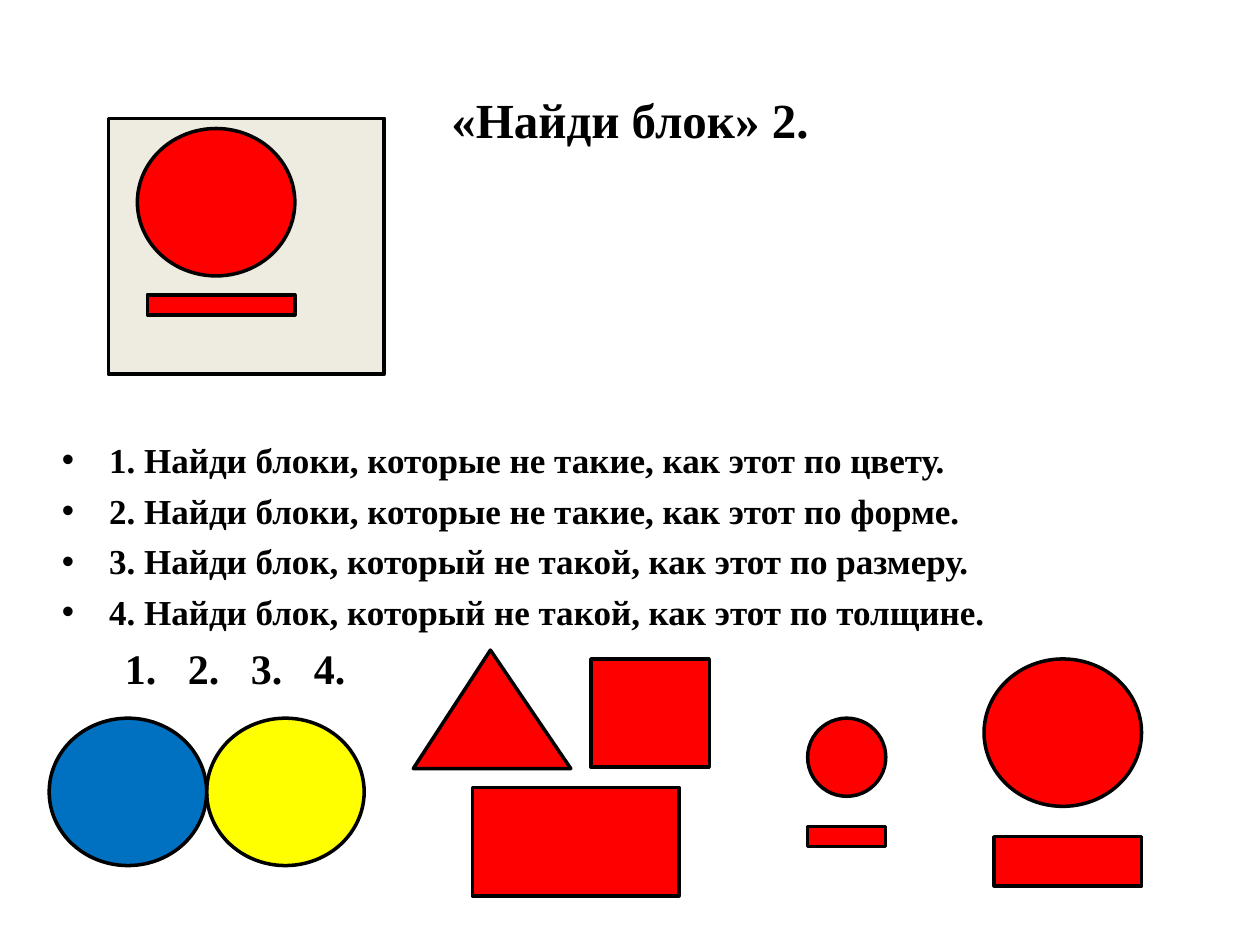
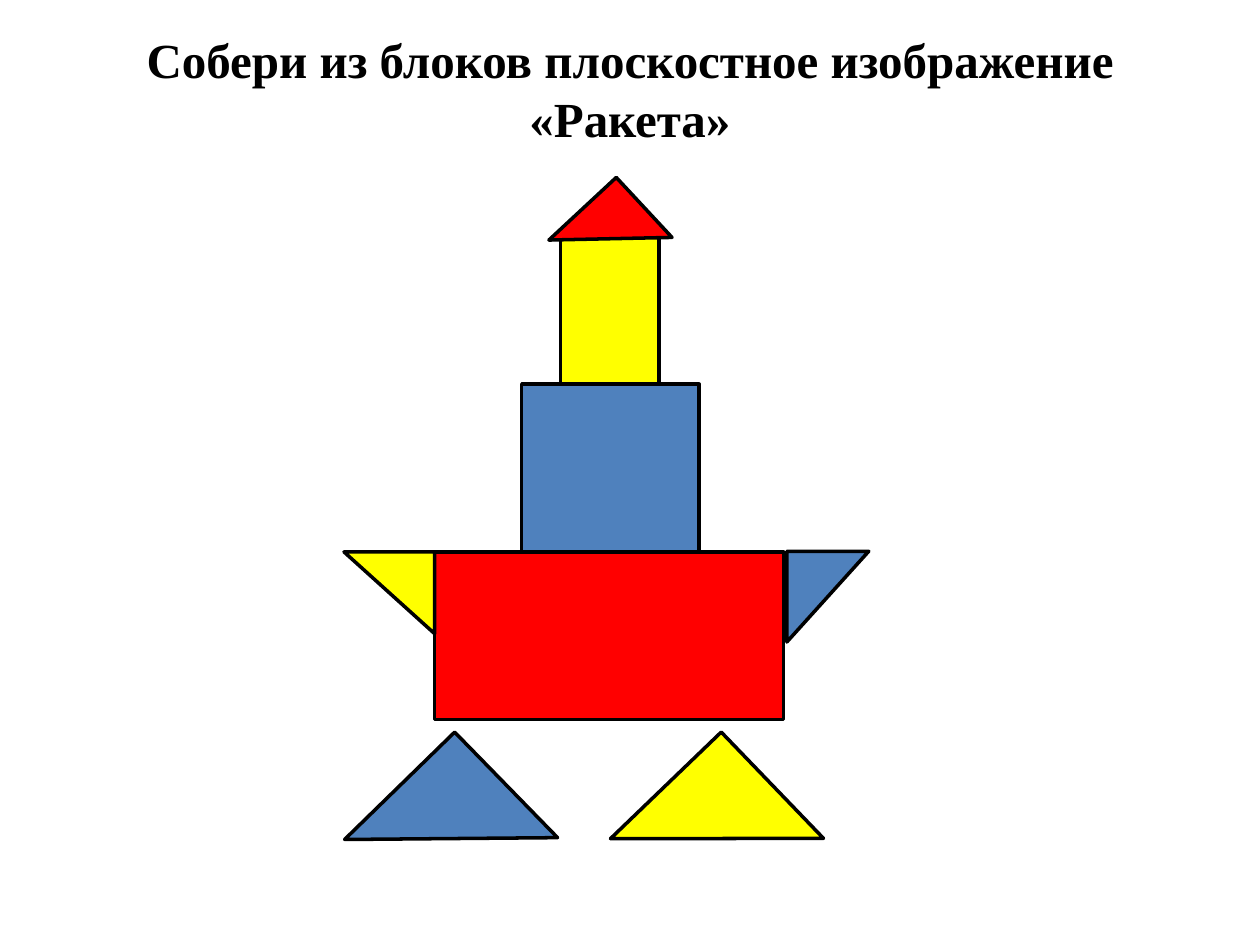
from lxml import etree
from pptx import Presentation
from pptx import util as u
from pptx.dml import color
from pptx.enum import shapes, text
from pptx.oxml import ns

FONT = "Times New Roman"
BLACK, CARD = "000000", "EEECE1"
RED, YELLOW, BLUE, STEEL = "FF0000", "FFFF00", "0070C0", "4F81BD"
KIND = shapes.MSO_SHAPE
CIRCLE_SIZE = (1.25, 1.17)

QUESTIONS = [
    "1. Найди блоки, которые не такие, как этот по цвету.",
    "2. Найди блоки, которые не такие, как этот по форме.",
    "3. Найди блок, который не такой, как этот по размеру.",
    "4. Найди блок, который не такой, как этот по толщине.",
]
ANSWER_TABS = [0.41, 2.99, 5.99, 7.33]


def rgb(hex_code):
    """Turn a hex string into a colour."""
    return color.RGBColor.from_string(hex_code)


def write(paragraph, words, size=20, bold=True, ink=BLACK, align=None, before=0):
    """Put formatted words into a paragraph."""
    run = paragraph.add_run()
    run.text = words
    run.font.name, run.font.size, run.font.bold = FONT, u.Pt(size), bold
    run.font.color.rgb = rgb(ink)
    paragraph.alignment = align
    paragraph.space_before = u.Pt(before)


def place(part, left, top, width, height):
    """Move and size a part in inches."""
    part.left, part.top = u.Inches(left), u.Inches(top)
    part.width, part.height = u.Inches(width), u.Inches(height)


def add_title(slide, words, top):
    """Fill the title placeholder in the shared style."""
    title = slide.shapes.title
    place(title, 0.5, top, 9, 0.94)
    frame = title.text_frame
    frame.auto_size = text.MSO_AUTO_SIZE.NONE
    frame.vertical_anchor = text.MSO_ANCHOR.MIDDLE
    write(frame.paragraphs[0], words, size=28, align=text.PP_ALIGN.CENTER)


def add_blocks(slide, origin, blocks):
    """Draw outlined blocks (kind, colour, left, top, width, height, turn) from an origin."""
    for kind, fill, left, top, width, height, *turn in blocks:
        block = slide.shapes.add_shape(
            kind, u.Inches(origin[0] + left), u.Inches(origin[1] + top),
            u.Inches(width), u.Inches(height))
        block.shadow.inherit = False
        block.fill.solid()
        block.fill.fore_color.rgb = rgb(fill)
        block.line.color.rgb = rgb(BLACK)
        block.line.width = u.Pt(2)
        block.rotation = turn[0] if turn else 0


def set_tabs(paragraph, stops):
    """Give a paragraph no bullet, no indent and the listed tab stops."""
    props = paragraph._p.get_or_add_pPr()
    props.set("marL", "0")
    props.set("indent", "0")
    etree.SubElement(props, ns.qn("a:buNone"))
    tabs = etree.SubElement(props, ns.qn("a:tabLst"))
    for stop in stops:
        etree.SubElement(tabs, ns.qn("a:tab"), pos=str(u.Inches(stop)), algn="l")


def add_questions(slide, box):
    """List the questions and the row of answer numbers below them."""
    body = slide.placeholders[1]
    place(body, *box)
    frame = body.text_frame
    frame.auto_size = text.MSO_AUTO_SIZE.NONE
    for index, question in enumerate(QUESTIONS):
        paragraph = frame.add_paragraph() if index else frame.paragraphs[0]
        write(paragraph, question, before=5 if index else 0)
    answers = frame.add_paragraph()
    set_tabs(answers, ANSWER_TABS)
    numbers = "".join(f"\t{number}." for number in range(1, len(ANSWER_TABS) + 1))
    write(answers, numbers, size=24, before=5.5)


def add_sample(slide, origin):
    """Draw the card with the block to compare against."""
    add_blocks(slide, origin, [
        (KIND.RECTANGLE, CARD, 0, 0, 2.19, 2.03),
        (KIND.OVAL, RED, 0.23, 0.08, *CIRCLE_SIZE),
        (KIND.RECTANGLE, RED, 0.31, 1.4, 1.17, 0.16),
    ])


def add_answers(slide):
    """Draw the blocks differing by colour, shape, size and thickness."""
    add_blocks(slide, (0.39, 5.7), [
        (KIND.OVAL, YELLOW, 1.25, 0, *CIRCLE_SIZE),
        (KIND.OVAL, BLUE, 0, 0, *CIRCLE_SIZE),
    ])
    add_blocks(slide, (3.28, 5.16), [
        (KIND.RECTANGLE, RED, 1.41, 0.07, 0.94, 0.86),
        (KIND.RECTANGLE, RED, 0.47, 1.09, 1.64, 0.86),
        (KIND.ISOSCELES_TRIANGLE, RED, 0, 0, 1.25, 0.94),
    ])
    slide.shapes[-1].adjustments[0] = 0.49
    add_blocks(slide, (6.41, 5.7), [
        (KIND.OVAL, RED, 0, 0, 0.62, 0.62),
        (KIND.RECTANGLE, RED, 0, 0.86, 0.62, 0.16),
    ])
    add_blocks(slide, (7.81, 5.23), [
        (KIND.OVAL, RED, 0, 0, *CIRCLE_SIZE),
        (KIND.RECTANGLE, RED, 0.08, 1.41, 1.17, 0.39),
    ])


def add_rocket(slide, origin):
    """Assemble the rocket from rectangles and turned right triangles."""
    add_blocks(slide, origin, [
        (KIND.RECTANGLE, RED, 0.72, 2.81, 2.77, 1.33),
        (KIND.RECTANGLE, STEEL, 1.41, 1.48, 1.41, 1.33),
        (KIND.RECTANGLE, YELLOW, 1.72, 0.31, 0.78, 1.17),
        (KIND.RIGHT_TRIANGLE, YELLOW, 2.35, 4.5, 1.22, 1.17, 136.1),
        (KIND.RIGHT_TRIANGLE, YELLOW, 0, 2.81, 0.72, 0.65, 180),
        (KIND.RIGHT_TRIANGLE, STEEL, 3.48, 2.84, 0.72, 0.65, 90),
        (KIND.RIGHT_TRIANGLE, RED, 1.75, 0, 0.73, 0.65, 137.1),
        (KIND.RIGHT_TRIANGLE, STEEL, 0.24, 4.5, 1.22, 1.17, 135.7),
    ])


def build_find_block(deck):
    """Build the slide with the block-finding task."""
    slide = deck.slides.add_slide(deck.slide_layouts[1])
    add_title(slide, "«Найди блок» 2.", 0.47)
    add_questions(slide, (0.39, 3.43, 9.18, 3.45))
    add_sample(slide, (0.86, 0.94))
    add_answers(slide)


def build_rocket(deck):
    """Build the slide with the rocket task."""
    slide = deck.slides.add_slide(deck.slide_layouts[5])
    add_title(slide, "Собери из блоков плоскостное изображение «Ракета»", 0.23)
    add_rocket(slide, (2.73, 1.57))


def main():
    """Build and save the deck."""
    deck = Presentation()
    deck.slide_width, deck.slide_height = u.Inches(10), u.Inches(7.5)
    build_find_block(deck)
    build_rocket(deck)
    deck.save("out.pptx")


if __name__ == "__main__":
    main()
